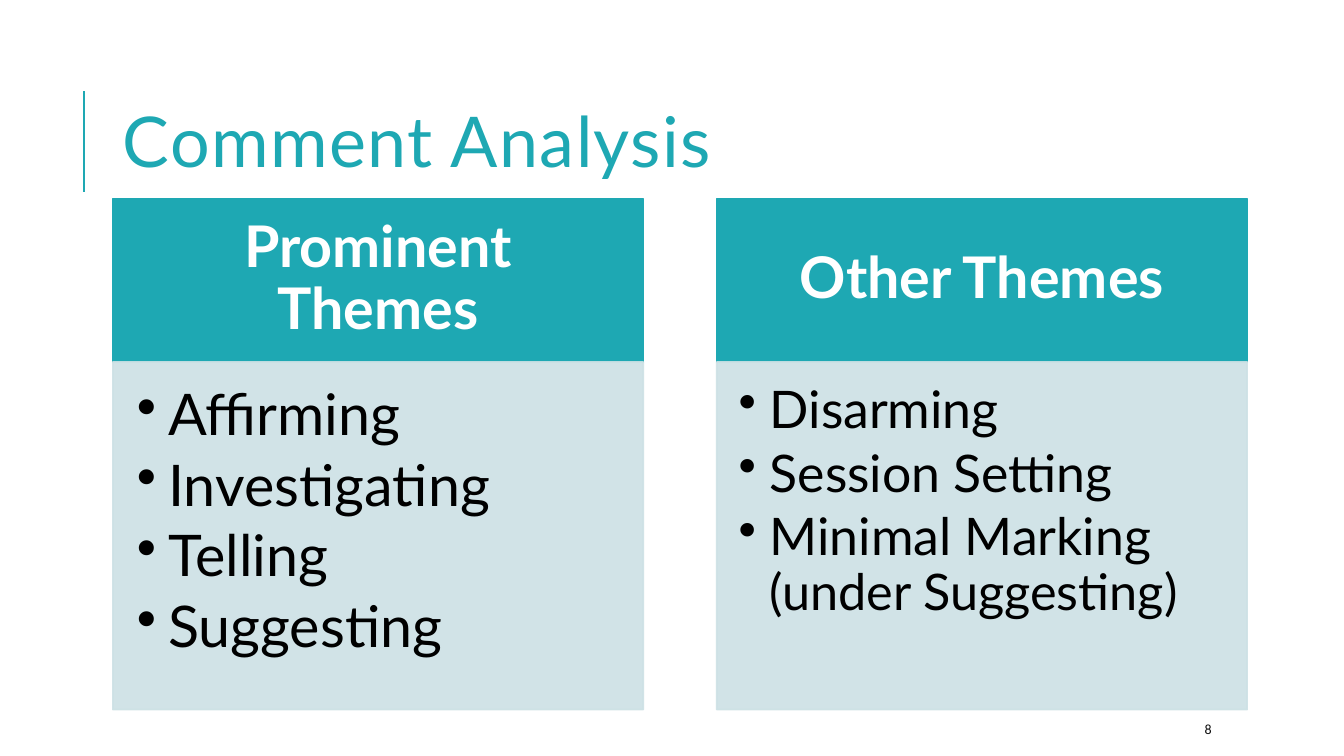
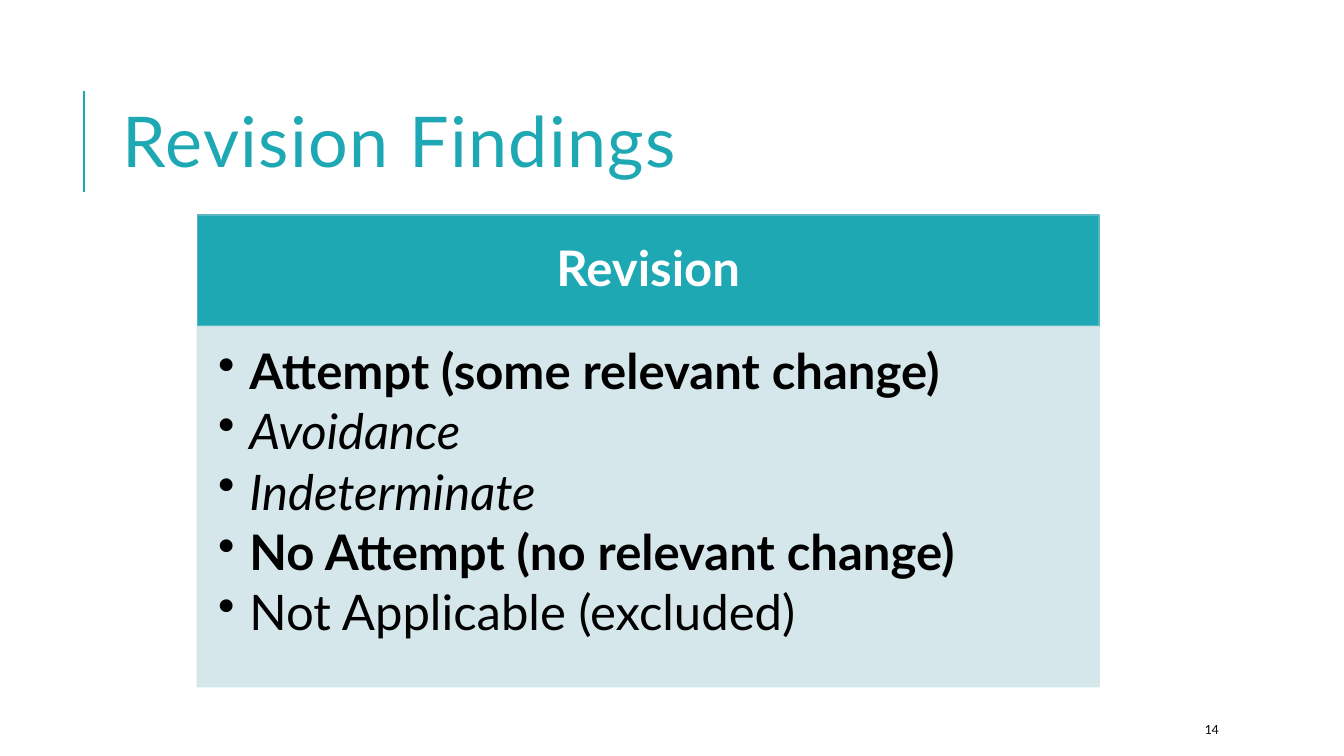
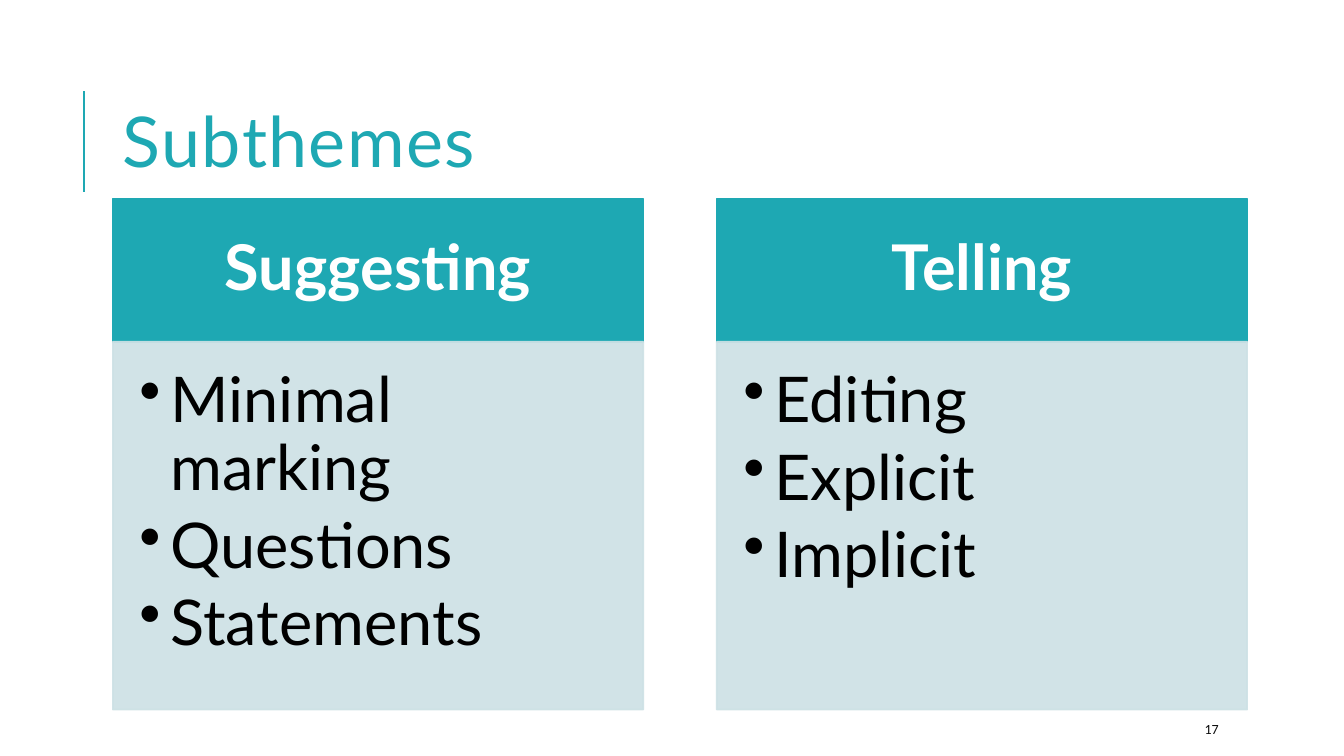
from lxml.etree import SubElement
from pptx import Presentation
from pptx.dml.color import RGBColor
from pptx.enum.shapes import MSO_CONNECTOR, MSO_SHAPE
from pptx.enum.text import MSO_ANCHOR, PP_ALIGN
from pptx.oxml.ns import qn
from pptx.util import Inches, Pt

COLOURS = {
    "teal": "1EA8B3",
    "light teal": "58B6C0",
    "pale": "CDE1E5",
    "paler": "D1E5E8",
    "white": "FFFFFF",
    "black": "000000",
    "number": "0D0D0D",
}
INDENT = 0.31
BOLD = {"bold": True}
ITALIC = {"italic": True}

PAIR = {"lefts": [1.12, 7.11], "top": 1.97, "width": 5.26, "bottom": 7.04,
        "border": "teal", "body": "pale"}
SINGLE = {"lefts": [1.96], "top": 2.13, "width": 8.94, "bottom": 6.81,
          "border": "light teal", "body": "paler"}

SLIDES = [
    ("Comment Analysis", 8, PAIR, 1.62, 41, [
        ("Prominent Themes", 41, [
            [("Affirming", {})],
            [("Investigating", {})],
            [("Telling", {})],
            [("Suggesting", {})],
        ]),
        ("Other Themes", 37, [
            [("Disarming", {})],
            [("Session Setting", {})],
            [("Minimal Marking ", {}), ("(under Suggesting)", {"size": 36})],
        ]),
    ]),
    ("Revision Findings", 14, SINGLE, 1.11, 35, [
        ("Revision", 35, [
            [("Attempt (some relevant change)", BOLD)],
            [("Avoidance", ITALIC)],
            [("Indeterminate", ITALIC)],
            [("No Attempt (no relevant change)", BOLD)],
            [("Not Applicable (excluded)", {})],
        ]),
    ]),
    ("Subthemes", 17, PAIR, 1.42, 45, [
        ("Suggesting", 45, [
            [("Minimal marking", {})],
            [("Questions", {})],
            [("Statements", {})],
        ]),
        ("Telling", 45, [
            [("Editing", {})],
            [("Explicit", {})],
            [("Implicit", {})],
        ]),
    ]),
]


def format_run(run, size, colour, font="Lato", bold=False, italic=False):
    run.font.name = font
    run.font.size = Pt(size)
    run.font.bold = bold
    run.font.italic = italic
    run.font.color.rgb = RGBColor.from_string(COLOURS[colour])


def add_panel(slide, position, fill, border, size, insets, anchor):
    shape = slide.shapes.add_shape(
        MSO_SHAPE.RECTANGLE, *[Inches(length) for length in position])
    shape.shadow.inherit = False
    shape.fill.solid()
    shape.fill.fore_color.rgb = RGBColor.from_string(COLOURS[fill])
    shape.line.color.rgb = RGBColor.from_string(COLOURS[border])
    shape.line.width = Pt(1.25)
    frame = shape.text_frame
    frame.word_wrap = True
    frame.vertical_anchor = anchor
    frame.margin_left, frame.margin_top, frame.margin_right, frame.margin_bottom = [
        Inches(inset * size / 72) for inset in insets]
    return shape


presentation = Presentation()
presentation.slide_width = Inches(13.33)
presentation.slide_height = Inches(7.5)

for title, number, grid, header_height, header_size, columns in SLIDES:
    slide = presentation.slides.add_slide(presentation.slide_layouts[6])

    rule = slide.shapes.add_connector(
        MSO_CONNECTOR.STRAIGHT, Inches(0.83), Inches(1.9), Inches(0.83), Inches(0.9))
    rule.line.color.rgb = RGBColor.from_string(COLOURS["teal"])
    rule.line.width = Pt(1.5)
    SubElement(rule.line._get_or_add_ln().getparent(), qn("a:effectLst"))

    title_box = slide.shapes.add_textbox(
        Inches(1.12), Inches(0.64), Inches(11.25), Inches(1.64))
    title_box.text_frame.word_wrap = True
    title_box.text_frame.vertical_anchor = MSO_ANCHOR.MIDDLE
    paragraph = title_box.text_frame.paragraphs[0]
    paragraph.text = title
    paragraph.line_spacing = 0.8
    format_run(paragraph.runs[0], 50, "teal")
    paragraph.runs[0].font._element.set("spc", "100")

    body_top = grid["top"] + header_height
    for left, (heading, body_size, items) in zip(grid["lefts"], columns):
        header = add_panel(
            slide, (left, grid["top"], grid["width"], header_height),
            "teal", grid["border"], header_size,
            (0.56, 0.32, 0.56, 0.32), MSO_ANCHOR.MIDDLE)
        paragraph = header.text_frame.paragraphs[0]
        paragraph.text = heading
        paragraph.alignment = PP_ALIGN.CENTER
        paragraph.line_spacing = 0.9
        format_run(paragraph.runs[0], header_size, "white", bold=True)

        body = add_panel(
            slide, (left, body_top, grid["width"], grid["bottom"] - body_top),
            grid["body"], grid["body"], body_size,
            (0.42, 0.42, 0.56, 0.63), MSO_ANCHOR.TOP)
        for colour in body._element.spPr.iter(qn("a:srgbClr")):
            SubElement(colour, qn("a:alpha"), val="90000")

        for index, item in enumerate(items):
            frame = body.text_frame
            paragraph = frame.add_paragraph() if index else frame.paragraphs[0]
            paragraph.alignment = PP_ALIGN.LEFT
            paragraph.line_spacing = 0.9
            paragraph.space_after = Pt(0.15 * body_size)
            properties = paragraph._p.get_or_add_pPr()
            properties.set("marL", str(Inches(INDENT)))
            properties.set("indent", str(-Inches(INDENT)))
            SubElement(properties, qn("a:buChar"), char="•")
            for text, style in item:
                run = paragraph.add_run()
                run.text = text
                format_run(run, **{"size": body_size, "colour": "black", **style})

    number_box = slide.shapes.add_textbox(
        Inches(11.85), Inches(7.08), Inches(1.06), Inches(0.3))
    number_box.text_frame.word_wrap = True
    number_box.text_frame.vertical_anchor = MSO_ANCHOR.MIDDLE
    number_box.text_frame.text = str(number)
    format_run(number_box.text_frame.paragraphs[0].runs[0], 10, "number", "Calibri")

presentation.save("out.pptx")
